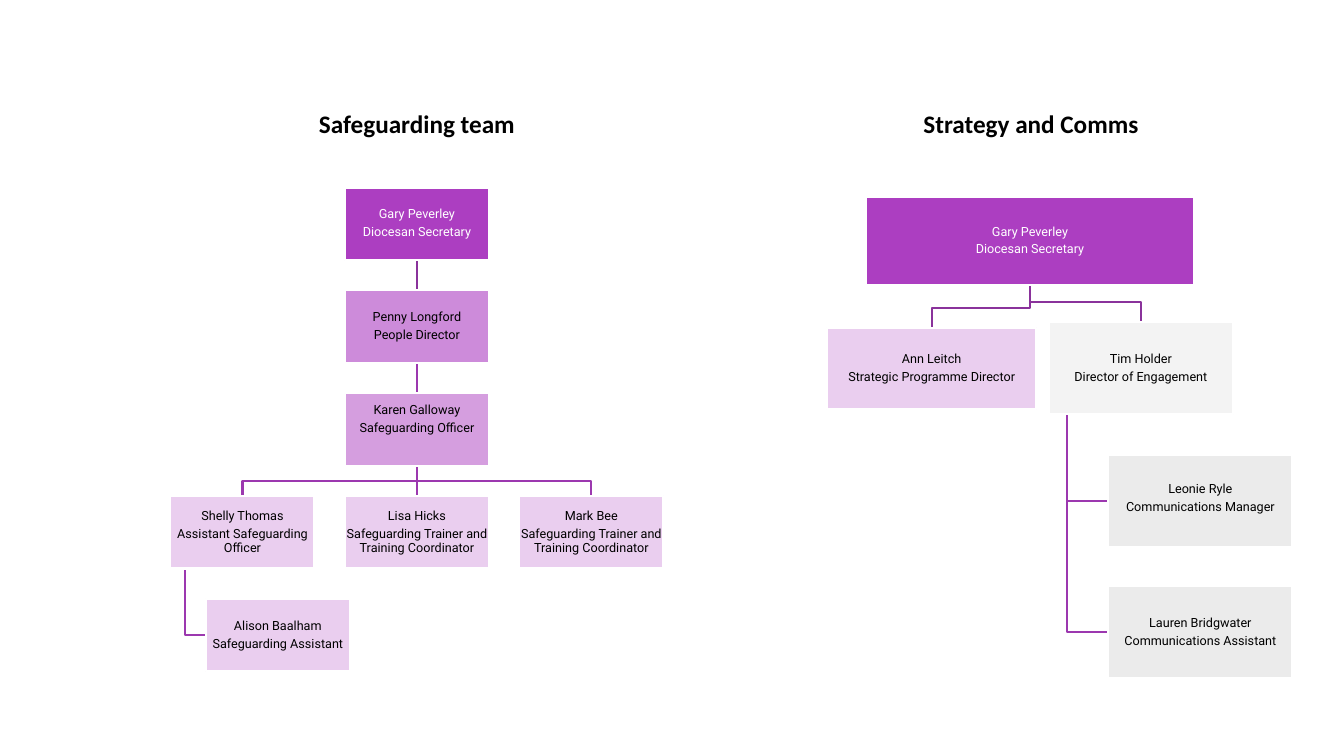
"""Build a slide with two team organisation charts."""
from dataclasses import dataclass

import lxml.etree
import pptx
import pptx.dml.color
import pptx.enum.shapes
import pptx.enum.text
import pptx.oxml.ns
import pptx.util

Inches = pptx.util.Inches
RGBColor = pptx.dml.color.RGBColor
Anchor = pptx.enum.text.MSO_ANCHOR

BLACK = RGBColor(0x00, 0x00, 0x00)
WHITE = RGBColor(0xFF, 0xFF, 0xFF)
PURPLE = RGBColor(0xAC, 0x3E, 0xC1)
ORCHID = RGBColor(0xCD, 0x8B, 0xDA)
SILVER = RGBColor(0xD3, 0xD3, 0xD3)
GREY = RGBColor(0xB0, 0xB0, 0xB0)
PALE = RGBColor(0xEB, 0xEB, 0xEB)
DARK = RGBColor(0x8A, 0x32, 0x9B)
VIOLET = RGBColor(0x9C, 0x38, 0xAF)


@dataclass(frozen=True)
class Person:
    name: str
    role: str
    left: float
    top: float
    fill: RGBColor
    alpha: int = 100
    width: float = 1.43
    height: float = 0.72
    ink: RGBColor = BLACK
    lift: float = 0

    @property
    def middle(self) -> float:
        return self.left + self.width / 2

    @property
    def bottom(self) -> float:
        return self.top + self.height


@dataclass(frozen=True)
class Link:
    boss: Person
    staff: Person
    color: RGBColor = VIOLET
    bend: float = 0.15
    hang: bool = False

    def points(self) -> list[tuple[float, float]]:
        boss, staff = self.boss, self.staff
        if self.hang:
            stem = boss.left + boss.width / 10
            side = staff.top + staff.height / 2
            return [(stem, boss.bottom), (stem, side), (staff.left, side)]
        start, end = (boss.middle, boss.bottom), (staff.middle, staff.top)
        if boss.middle == staff.middle:
            return [start, end]
        level = staff.top - self.bend
        return [start, (boss.middle, level), (staff.middle, level), end]


ROWS = [1.86 + 1.02 * row for row in range(5)]
COLS = [1.69 + 1.73 * col for col in range(3)]
TRAINER = "Safeguarding Trainer and Training Coordinator"

gary = Person("Gary Peverley", "Diocesan Secretary", COLS[1], ROWS[0], PURPLE, ink=WHITE)
penny = Person("Penny Longford", "People Director", COLS[1], ROWS[1], ORCHID)
karen = Person("Karen Galloway", "Safeguarding Officer", COLS[1], ROWS[2], PURPLE, 50, lift=0.2)
shelly = Person("Shelly Thomas", "Assistant Safeguarding Officer", COLS[0], ROWS[3], PURPLE, 25)
lisa = Person("Lisa Hicks", TRAINER, COLS[1], ROWS[3], PURPLE, 25)
mark = Person("Mark Bee", TRAINER, COLS[2], ROWS[3], PURPLE, 25)
alison = Person("Alison Baalham", "Safeguarding Assistant", 2.04, ROWS[4], PURPLE, 25)

chief = Person("Gary Peverley", "Diocesan Secretary", 8.59, 1.95, PURPLE,
               width=3.25, height=0.88, ink=WHITE)
ann = Person("Ann Leitch", "Strategic Programme Director", 8.2, 3.25, PURPLE, 25, 2.08, 0.81)
tim = Person("Tim Holder", "Director of Engagement", 10.4, 3.19, SILVER, 25, 1.83, 0.92)
leonie = Person("Leonie Ryle", "Communications Manager", 10.99, 4.51, GREY, 25,
                1.83, 0.92, lift=0.05)
lauren = Person("Lauren Bridgwater", "Communications Assistant", 10.99, 5.81, PALE,
                width=1.83, height=0.92)

PEOPLE = [gary, penny, karen, shelly, lisa, mark, alison, chief, ann, tim, leonie, lauren]
LINKS = [
    Link(gary, penny, DARK),
    Link(penny, karen),
    *(Link(karen, staff) for staff in (shelly, lisa, mark)),
    Link(shelly, alison, hang=True),
    *(Link(chief, staff, DARK, 0.19) for staff in (ann, tim)),
    *(Link(tim, staff, hang=True) for staff in (leonie, lauren)),
]
TITLES = {"Safeguarding team": 0.79, "Strategy and Comms": 6.88}


def write(frame, lines: list[str], *, font: str, size: float, color: RGBColor,
          bold: bool = False, pitch: float = 1, after: float = 0) -> None:
    frame.word_wrap = True
    for index, line in enumerate(lines):
        para = frame.add_paragraph() if index else frame.paragraphs[0]
        para.alignment = pptx.enum.text.PP_ALIGN.CENTER
        para.line_spacing = pitch
        para.space_after = pptx.util.Pt(after)
        run = para.add_run()
        run.text = line
        run.font.name = font
        run.font.size = pptx.util.Pt(size)
        run.font.bold = bold
        run.font.color.rgb = color


def stroke(shape, color: RGBColor) -> None:
    shape.line.color.rgb = color
    shape.line.width = pptx.util.Pt(1.5)


def draw_link(shapes, link: Link) -> None:
    spots = [(Inches(x), Inches(y)) for x, y in link.points()]
    if len(spots) == 2:
        line = shapes.add_connector(pptx.enum.shapes.MSO_CONNECTOR.STRAIGHT, *spots[0], *spots[1])
        lxml.etree.SubElement(line._element.spPr, pptx.oxml.ns.qn("a:effectLst"))
    else:
        form = shapes.build_freeform(*spots[0])
        form.add_line_segments(spots[1:], close=False)
        line = form.convert_to_shape()
        line.fill.background()
        line.shadow.inherit = False
    stroke(line, link.color)


def draw_box(shapes, person: Person) -> None:
    box = shapes.add_shape(
        pptx.enum.shapes.MSO_SHAPE.RECTANGLE, Inches(person.left), Inches(person.top),
        Inches(person.width), Inches(person.height))
    box.shadow.inherit = False
    box.fill.solid()
    box.fill.fore_color.rgb = person.fill
    if person.alpha < 100:
        tint = box._element.spPr.find(".//" + pptx.oxml.ns.qn("a:srgbClr"))
        alpha = lxml.etree.SubElement(tint, pptx.oxml.ns.qn("a:alpha"))
        alpha.set("val", str(person.alpha * 1000))
    stroke(box, WHITE)
    frame = box.text_frame
    frame.vertical_anchor = Anchor.MIDDLE
    frame.margin_left = frame.margin_right = frame.margin_top = Inches(0.01)
    frame.margin_bottom = Inches(0.01 + person.lift)
    write(frame, [person.name, person.role], font="Roboto", size=9,
          color=person.ink, pitch=0.9, after=3.1)


def draw_title(shapes, text: str, left: float) -> None:
    box = shapes.add_textbox(Inches(left), Inches(1.03), Inches(6.69), Inches(0.4))
    box.text_frame.auto_size = pptx.enum.text.MSO_AUTO_SIZE.SHAPE_TO_FIT_TEXT
    write(box.text_frame, [text], font="Calibri", size=18, color=BLACK, bold=True)


def main() -> None:
    deck = pptx.Presentation()
    deck.slide_width, deck.slide_height = Inches(13.33), Inches(7.5)
    shapes = deck.slides.add_slide(deck.slide_layouts[6]).shapes
    for text, left in TITLES.items():
        draw_title(shapes, text, left)
    for link in LINKS:
        draw_link(shapes, link)
    for person in PEOPLE:
        draw_box(shapes, person)
    deck.save("out.pptx")


if __name__ == "__main__":
    main()
